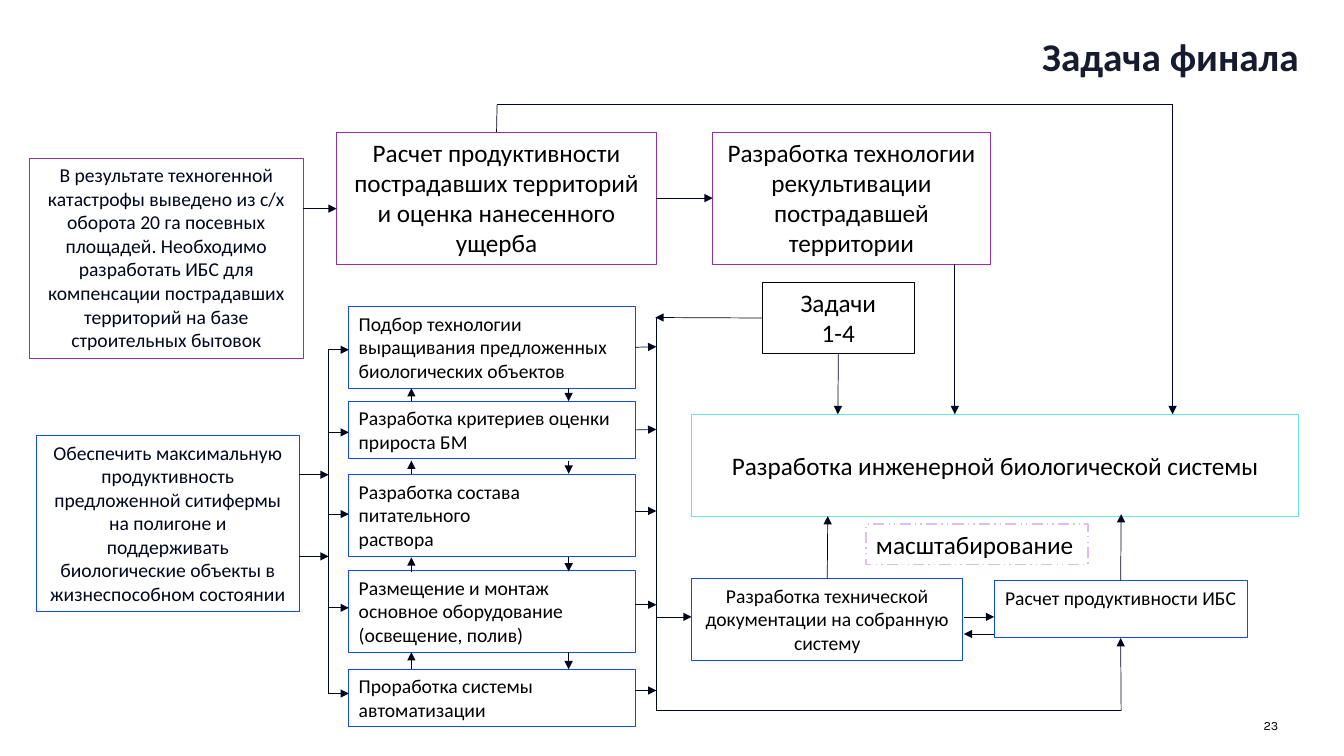
from lxml import etree
from pptx import Presentation
from pptx import util as u
from pptx.dml.color import RGBColor
from pptx.enum import dml, shapes, text
from pptx.oxml.ns import qn

SCALE = 9144  # EMU in one px, 100 px to the inch
FONT = "Calibri"
INK, BLACK = "00071D", "000000"
PURPLE, BLUE, TEAL, LILAC = "962EB0", "0F49FF", "67E4E4", "E3BBED"
LEFT, CENTER, RIGHT = text.PP_ALIGN.LEFT, text.PP_ALIGN.CENTER, text.PP_ALIGN.RIGHT
SNAP = 1  # px within which a line end joins the middle of a side


def px(value):
    return u.Emu(value * SCALE)


def color(value):
    return RGBColor.from_string(value)


def write(frame, lines, size, align, ink=BLACK, font=FONT, bold=False):
    frame.text = "\n".join(lines)
    for paragraph in frame.paragraphs:
        paragraph.alignment = align
        paragraph.font.size = u.Pt(size)
        paragraph.font.name = font
        paragraph.font.bold = bold
        paragraph.font.color.rgb = color(ink)


def add_title(slide, title):
    shape = slide.shapes.title
    shape.left, shape.top, shape.width, shape.height = map(px, (718, 35, 570, 44))
    frame = shape.text_frame
    frame.margin_left = frame.margin_right = frame.margin_bottom = 0
    frame.margin_top = px(2)
    frame.vertical_anchor = text.MSO_ANCHOR.BOTTOM
    write(frame, [title], 28, RIGHT, "161B2E", bold=True)
    frame.paragraphs[0].line_spacing = 0.9


def add_box(slide, place, lines, outline, size=14, align=CENTER, ink=BLACK,
            anchor=text.MSO_ANCHOR.TOP):
    shape = slide.shapes.add_shape(shapes.MSO_SHAPE.RECTANGLE, *map(px, place))
    shape.shadow.inherit = False
    shape.fill.background()
    shape.line.color.rgb = color(outline)
    shape.line.width = u.Pt(0.75)
    shape.text_frame.word_wrap = True
    shape.text_frame.vertical_anchor = anchor
    write(shape.text_frame, lines, size, align, ink)
    return shape


def side_at(boxes, x, y):
    """Find the box and side whose middle lies at a point."""
    for box in boxes:
        middle_x, middle_y = box.left + box.width / 2, box.top + box.height / 2
        sides = ((middle_x, box.top), (box.left, middle_y),
                 (middle_x, box.top + box.height), (box.left + box.width, middle_y))
        for number, (side_x, side_y) in enumerate(sides):
            if max(abs(side_x - px(x)), abs(side_y - px(y))) <= px(SNAP):
                return box, number
    return None


def add_line(slide, boxes, start, end, arrow=True):
    line = slide.shapes.add_connector(
        shapes.MSO_CONNECTOR.STRAIGHT, *map(px, (*start, *end)))
    line.line.color.rgb = color(INK)
    line.line.width = u.Pt(0.5)
    if arrow:
        etree.SubElement(line.line._get_or_add_ln(), qn("a:tailEnd"), type="triangle")
    etree.SubElement(line._element.spPr, qn("a:effectLst"))
    for point, join in ((start, line.begin_connect), (end, line.end_connect)):
        side = side_at(boxes, *point)
        if side:
            join(*side)


def add_boxes(slide):
    # Starting conditions
    boxes = [
        add_box(slide, (29, 157, 272, 199), [
            "В результате техногенной катастрофы выведено из с/х оборота 20 га "
            "посевных площадей. Необходимо разработать ИБС для компенсации "
            "пострадавших территорий на базе строительных бытовок"], PURPLE, ink=INK),
        add_box(slide, (36, 432, 261, 175), [
            "Обеспечить максимальную продуктивность предложенной ситифермы на "
            "полигоне и поддерживать биологические объекты в жизнеспособном "
            "состоянии"], BLUE, ink=INK),
    ]
    # Stack of farm tasks
    tasks = [
        (304, 81, ["Подбор технологии выращивания предложенных биологических объектов"]),
        (398, 57, ["Разработка критериев оценки", "прироста БМ"]),
        (471, 81, ["Разработка состава питательного", "раствора"]),
        (566, 81, ["Размещение и монтаж основное оборудование (освещение, полив)"]),
        (664, 57, ["Проработка системы автоматизации"]),
    ]
    for top, height, lines in tasks:
        boxes.append(add_box(slide, (346, top, 284, height), lines, BLUE, align=LEFT))
    # Territory recovery, shared tasks and the resulting system
    large = [
        ((334, 131, 317, 131), ["Расчет продуктивности пострадавших территорий и оценка "
                                "нанесенного ущерба"], PURPLE),
        ((707, 131, 275, 131), ["Разработка технологии рекультивации",
                                "пострадавшей территории"], PURPLE),
        ((756, 280, 151, 71), ["Задачи", "1-4"], BLACK),
    ]
    for place, lines, outline in large:
        boxes.append(add_box(slide, place, lines, outline, 18))
    boxes += [
        add_box(slide, (686, 411, 602, 101),
                ["Разработка инженерной биологической системы"], TEAL, 18,
                anchor=text.MSO_ANCHOR.MIDDLE),
        add_box(slide, (686, 574, 269, 81),
                ["Разработка технической документации на собранную систему"], BLUE),
        add_box(slide, (986, 576, 251, 57), ["Расчет продуктивности ИБС"], BLUE),
    ]
    # Scaling label
    label = add_box(slide, (859, 520, 220, 40), ["масштабирование"], LILAC, 18, LEFT)
    label.text_frame.word_wrap = False
    label.line.width = u.Pt(1)
    label.line.dash_style = dml.MSO_LINE.DASH_DOT_DOT
    return boxes


def add_lines(slide, boxes):
    # Trunk lines without heads
    trunks = [
        ((493, 104), (1163, 104)), ((493, 104), (493, 131)),
        ((651, 315), (651, 705)), ((651, 705), (1112, 705)),
        ((326, 347), (326, 688)),
    ]
    for start, end in trunks:
        add_line(slide, boxes, start, end, arrow=False)
    # Arrows into and out of each task of the stack
    for y in (347, 429, 510, 603, 688):
        add_line(slide, boxes, (325, y), (346, y))
        add_line(slide, boxes, (630, y - 3), (651, y - 3))
    # Arrows in the gaps of the stack
    for top, bottom in ((385, 398), (457, 470), (553, 567), (647, 664)):
        add_line(slide, boxes, (564, top), (564, bottom))
        add_line(slide, boxes, (408, bottom), (408, top))
    # Arrows between the other boxes
    arrows = [
        ((301, 207), (334, 207)), ((297, 471), (326, 471)), ((297, 552), (326, 552)),
        ((651, 196), (707, 196)), ((1163, 104), (1163, 411)), ((947, 262), (947, 411)),
        ((756, 315), (650, 315)), ((831, 351), (831, 411)), ((651, 612), (686, 612)),
        ((821, 574), (821, 512)), ((1112, 576), (1112, 510)), ((1112, 705), (1112, 633)),
        ((956, 612), (986, 612)), ((986, 629), (956, 629)),
    ]
    for start, end in arrows:
        add_line(slide, boxes, start, end)


def add_page_number(slide, number):
    shape = slide.shapes.add_textbox(*map(px, (1237, 707, 47, 25)))
    write(shape.text_frame, [number], 9, CENTER, font="Karla")


def main():
    presentation = Presentation()
    presentation.slide_width, presentation.slide_height = px(1333), px(750)
    slide = presentation.slides.add_slide(presentation.slide_layouts[5])
    add_title(slide, "Задача финала")
    boxes = add_boxes(slide)
    add_lines(slide, boxes)
    add_page_number(slide, "23")
    presentation.save("out.pptx")


if __name__ == "__main__":
    main()
